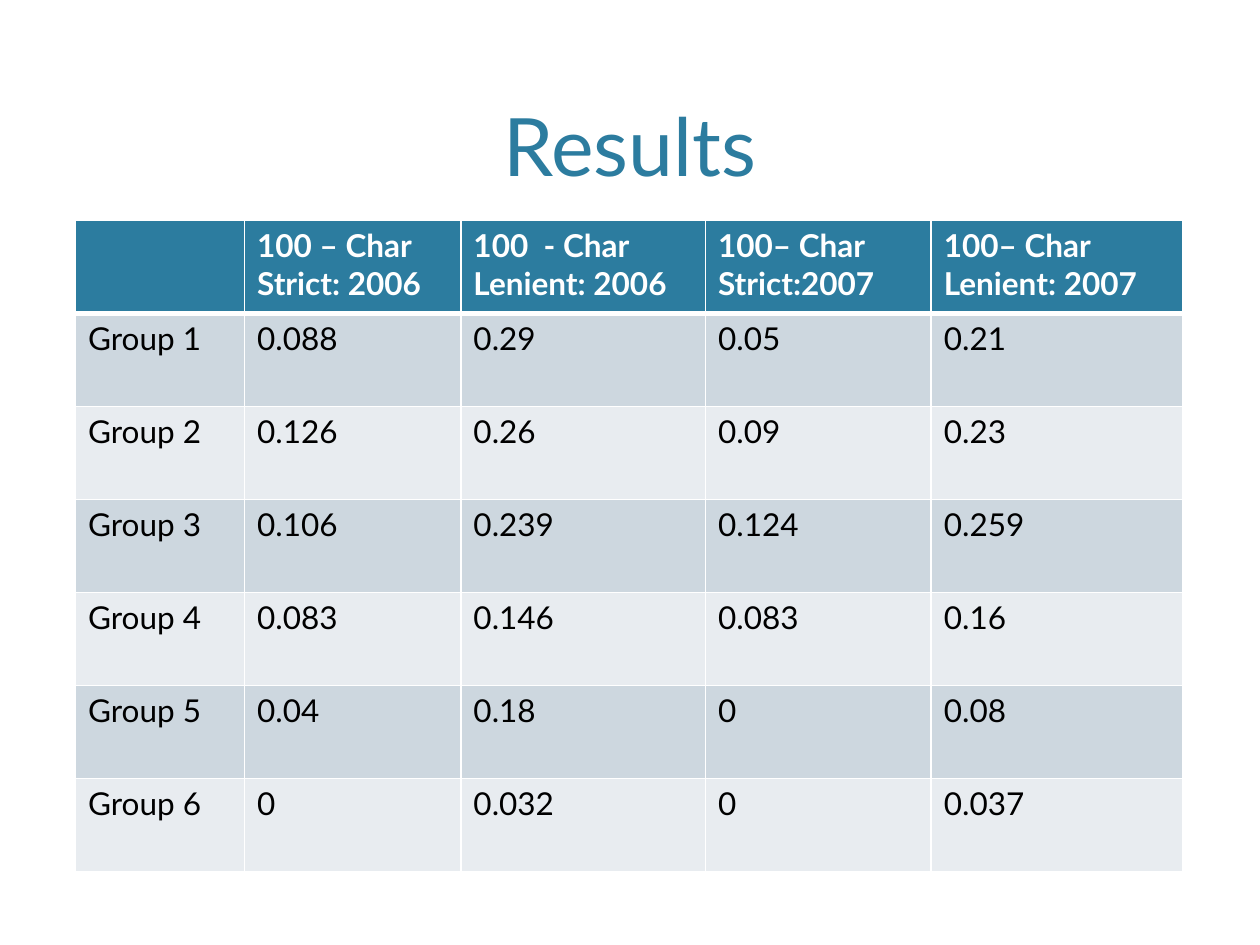
import dataclasses
import pptx
import pptx.dml.color
import pptx.enum.text
import pptx.oxml
import pptx.oxml.ns
import pptx.util

Pt = pptx.util.Pt
RGB = pptx.dml.color.RGBColor.from_string


@dataclasses.dataclass(frozen=True)
class Theme:
    font: str = "Lato"
    teal: str = "2C7C9F"
    white: str = "FFFFFF"
    black: str = "000000"
    bands: tuple = ("CDD7DF", "E8ECF0")
    head: float = 46
    body: float = 18
    thin: float = 1
    thick: float = 3


@dataclasses.dataclass(frozen=True)
class Style:
    fill: str
    color: str
    bold: bool
    top: float
    base: float


THEME = Theme()
WIDTHS = (96.6, 123.6, 139.8, 129, 144)
HEIGHT = 53.17
HEADS = ("", "100 – Char\nStrict: 2006", "100  - Char\nLenient: 2006",
         "100– Char\nStrict:2007", "100– Char\nLenient: 2007")
SCORES = (
    ("0.088", "0.29", "0.05", "0.21"),
    ("0.126", "0.26", "0.09", "0.23"),
    ("0.106", "0.239", "0.124", "0.259"),
    ("0.083", "0.146", "0.083", "0.16"),
    ("0.04", "0.18", "0", "0.08"),
    ("0", "0.032", "0", "0.037"),
)


def set_font(para, size: float, color: str, bold: bool = False) -> None:
    font = para.font
    font.name = THEME.font
    font.size = Pt(size)
    font.bold = bold
    font.color.rgb = RGB(color)


def add_edges(cell, style: Style) -> None:
    props = cell._tc.get_or_add_tcPr()
    sizes = (THEME.thin, THEME.thin, style.top, style.base)
    for spot, (side, width) in enumerate(zip("LRTB", sizes)):
        line = pptx.oxml.parse_xml(
            f'<a:ln{side} {pptx.oxml.ns.nsdecls("a")} w="{Pt(width)}">'
            f'<a:solidFill><a:srgbClr val="{THEME.white}"/></a:solidFill>'
            f'</a:ln{side}>')
        props.insert(spot, line)


def fill_cell(cell, text: str, style: Style) -> None:
    cell.text = text
    for para in cell.text_frame.paragraphs:
        set_font(para, THEME.body, style.color, style.bold)
    cell.fill.solid()
    cell.fill.fore_color.rgb = RGB(style.fill)
    add_edges(cell, style)


def row_style(row: int) -> Style:
    if row == 0:
        return Style(THEME.teal, THEME.white, True, THEME.thin, THEME.thick)
    top = THEME.thick if row == 1 else THEME.thin
    return Style(THEME.bands[(row - 1) % 2], THEME.black, False, top, THEME.thin)


def add_title(slide, text: str) -> None:
    title = slide.shapes.title
    title.left, title.top = Pt(43.2), Pt(8.64)
    title.width, title.height = Pt(633.6), Pt(105.12)
    frame = title.text_frame
    frame.text = text
    frame.vertical_anchor = pptx.enum.text.MSO_ANCHOR.BOTTOM
    para = frame.paragraphs[0]
    para.alignment = pptx.enum.text.PP_ALIGN.CENTER
    set_font(para, THEME.head, THEME.teal)


def add_scores(slide) -> None:
    rows = [HEADS]
    rows += [(f"Group {num}", *vals) for num, vals in enumerate(SCORES, 1)]
    table = slide.shapes.add_table(
        len(rows), len(WIDTHS), Pt(43.2), Pt(126),
        Pt(sum(WIDTHS)), Pt(HEIGHT * len(rows))).table
    for col, width in zip(table.columns, WIDTHS):
        col.width = Pt(width)
    for num, texts in enumerate(rows):
        table.rows[num].height = Pt(HEIGHT)
        for col, text in enumerate(texts):
            fill_cell(table.cell(num, col), text, row_style(num))


def main() -> None:
    deck = pptx.Presentation()
    deck.slide_width, deck.slide_height = Pt(720), Pt(540)
    slide = deck.slides.add_slide(deck.slide_layouts[5])
    add_title(slide, "Results")
    add_scores(slide)
    deck.save("out.pptx")


if __name__ == "__main__":
    main()
